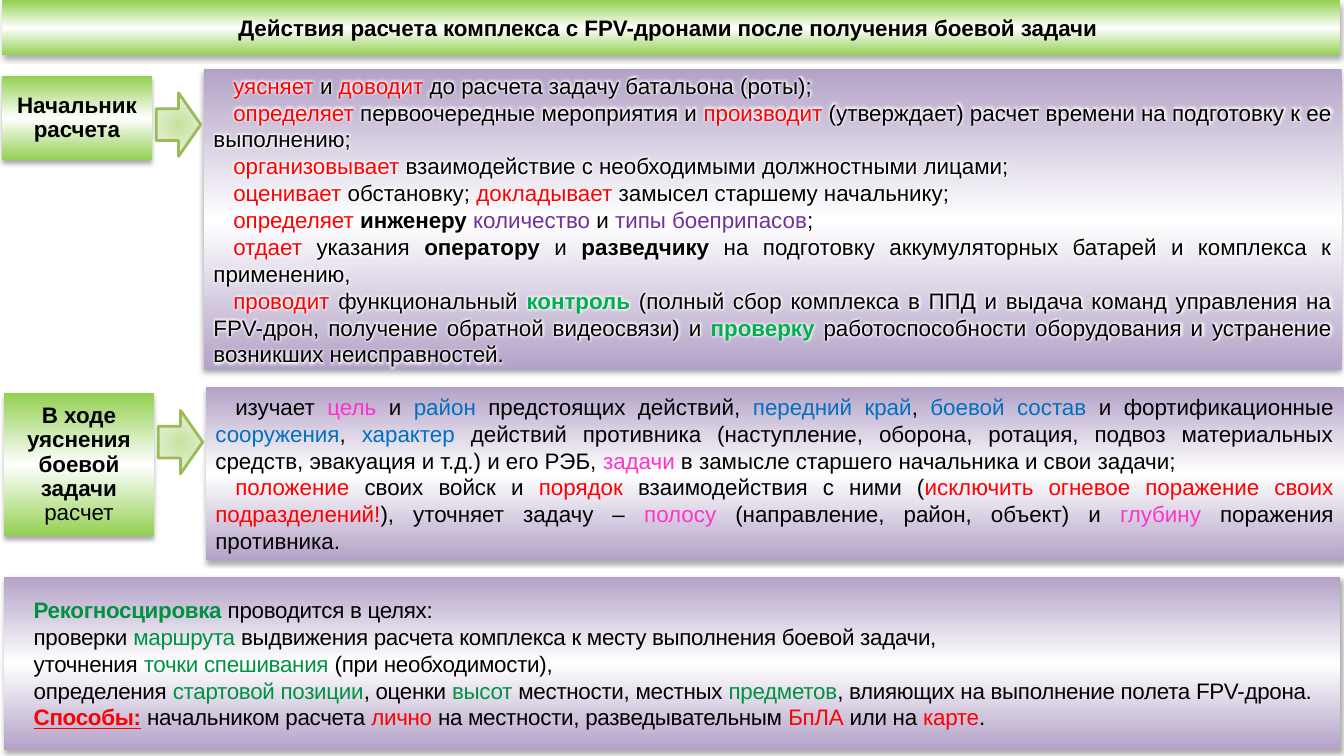
"""Build the slide on the actions of a crew after receiving its task."""
from pptx import Presentation
from pptx.dml.color import RGBColor
from pptx.enum.shapes import MSO_SHAPE as Shape
from pptx.enum.text import MSO_ANCHOR as Anchor, PP_ALIGN as Align
from pptx.oxml import parse_xml
from pptx.oxml.ns import nsdecls, qn
from pptx.util import Cm, Pt

BLACK = RGBColor(0x00, 0x00, 0x00)
WHITE = RGBColor(0xFF, 0xFF, 0xFF)
RED = RGBColor(0xFF, 0x00, 0x00)
PURPLE = RGBColor(0x70, 0x30, 0xA0)
GREEN = RGBColor(0x00, 0xB0, 0x50)
DARK_GREEN = RGBColor(0x00, 0x92, 0x42)
BLUE = RGBColor(0x00, 0x70, 0xC0)
PINK = RGBColor(0xFF, 0x33, 0xCC)
LIME = RGBColor(0x92, 0xD0, 0x50)
LILAC = RGBColor(0xB3, 0xA2, 0xC7)
OLIVE = RGBColor(0x9B, 0xBB, 0x59)
ARROW_STOPS = (RGBColor(0xC7, 0xE2, 0x9E), RGBColor(0xDB, 0xEB, 0xC4), RGBColor(0xED, 0xF5, 0xE2))

VERTICAL = '<a:lin ang="5400000" scaled="0"/>'
RADIAL = '<a:path path="circle"><a:fillToRect l="50000" t="50000" r="50000" b="50000"/></a:path>'

TITLE = [[("Действия расчета комплекса с FPV-дронами после получения боевой задачи ", BLACK, True)]]
CHIEF_LABEL = [[("Начальник расчета", BLACK, True)]]
CHIEF_DUTIES = [
    [("уясняет ", RED), "и ", ("доводит", RED), " до расчета задачу батальона (роты); "],
    [("определяет", RED), " первоочередные мероприятия и ", ("производит", RED),
     " (утверждает) расчет времени на подготовку к ее выполнению; "],
    [("организовывает", RED), " взаимодействие с необходимыми должностными лицами; "],
    [("оценивает", RED), " обстановку; ", ("докладывает", RED), " замысел старшему начальнику; "],
    [("определяет ", RED), ("инженеру ", BLACK, True), ("количество ", PURPLE), "и ",
     ("типы боеприпасов", PURPLE), "; "],
    [("отдает", RED), " указания ", ("оператору", BLACK, True), " и ", ("разведчику", BLACK, True),
     " на подготовку аккумуляторных батарей и комплекса к применению, "],
    [("проводит", RED), " функциональный ", ("контроль", GREEN, True),
     " (полный сбор комплекса в ППД и выдача команд управления на FPV-дрон, "
     "получение обратной видеосвязи) и ", ("проверку", GREEN, True),
     " работоспособности оборудования и устранение возникших неисправностей. "],
]
STUDY_LABEL = [[("В ходе уяснения боевой задачи ", BLACK, True), "расчет"]]
STUDY_POINTS = [
    ["изучает ", ("цель", PINK), " и ", ("район ", BLUE), "предстоящих действий,",
     (" передний край", BLUE), ", ", ("боевой состав ", BLUE), "и фортификационные ",
     ("сооружения", BLUE), ", ", ("характер", BLUE),
     " действий противника (наступление, оборона, ротация, подвоз материальных средств, "
     "эвакуация и т.д.) и его РЭБ, ", ("задачи", PINK),
     " в замысле старшего начальника и свои задачи; "],
    [("положение", RED), " своих войск и ", ("порядок", RED), " взаимодействия с ними (",
     ("исключить огневое поражение своих подразделений!", RED), "), уточняет задачу – ",
     ("полосу", PINK), " (направление, район, объект) и ", ("глубину", PINK),
     " поражения противника."],
]
RECONNAISSANCE = [
    [("Рекогносцировка ", DARK_GREEN, True), "проводится в целях: "],
    ["проверки ", ("маршрута", DARK_GREEN),
     " выдвижения расчета комплекса к месту выполнения боевой задачи, "],
    ["уточнения ", ("точки спешивания ", DARK_GREEN), "(при необходимости), "],
    ["определения ", ("стартовой позиции", DARK_GREEN), ", оценки ", ("высот", DARK_GREEN),
     " местности, местных ", ("предметов", DARK_GREEN),
     ", влияющих на выполнение полета FPV-дрона. "],
    [("Способы:", RED, True, True), " начальником расчета ", ("лично", RED),
     " на местности, разведывательным ", ("БпЛА", RED), " или на ", ("карте", RED), "."],
]


def set_gradient(shape, colors, direction):
    """Fill a shape with three evenly spaced gradient stops."""
    shape.fill.gradient()
    stops = "".join(f'<a:gs pos="{index * 50000}"><a:srgbClr val="{color}"/></a:gs>'
                    for index, color in enumerate(colors))
    gradient = parse_xml(f'<a:gradFill {nsdecls("a")} rotWithShape="1">'
                         f'<a:gsLst>{stops}</a:gsLst>{direction}</a:gradFill>')
    properties = shape._element.spPr
    properties.replace(properties.find(qn("a:gradFill")), gradient)


def add_shadow(shape):
    """Put a soft shadow below a shape."""
    shadow = parse_xml(f'<a:outerShdw {nsdecls("a")} blurRad="{Pt(3.5)}" dist="{Pt(2.2)}" '
                       'dir="5400000" rotWithShape="0"><a:srgbClr val="000000">'
                       '<a:alpha val="32000"/></a:srgbClr></a:outerShdw>')
    shape._element.spPr.find(qn("a:effectLst")).append(shadow)


def add_glow(run):
    """Surround the letters of a run with a white glow."""
    glow = parse_xml(f'<a:effectLst {nsdecls("a")}><a:glow rad="{Pt(5)}">'
                     f'<a:srgbClr val="{WHITE}"/></a:glow></a:effectLst>')
    run.font._element.find(qn("a:solidFill")).addnext(glow)


def add_run(paragraph, text, color=BLACK, bold=False, underline=False):
    """Append one formatted run to a paragraph."""
    run = paragraph.add_run()
    run.text = text
    run.font.name = "Arial"
    run.font.size = Pt(16)
    run.font.bold = bold
    run.font.underline = underline
    run.font.color.rgb = color
    return run


def add_shape(slide, kind, left, top, width, height):
    """Add a preset shape without shadow, placed in centimetres."""
    shape = slide.shapes.add_shape(kind, Cm(left), Cm(top), Cm(width), Cm(height))
    shape.shadow.inherit = False
    return shape


def add_box(slide, place, color, paragraphs, align=Align.CENTER, spacing=1.0):
    """Add a shaded rectangle with text and return its paragraphs."""
    box = add_shape(slide, Shape.RECTANGLE, *place)
    set_gradient(box, (color, WHITE, color), VERTICAL)
    box.line.fill.background()
    add_shadow(box)
    frame = box.text_frame
    frame.word_wrap = True
    frame.vertical_anchor = Anchor.MIDDLE
    for index, pieces in enumerate(paragraphs):
        paragraph = frame.add_paragraph() if index else frame.paragraphs[0]
        paragraph.alignment = align
        paragraph.line_spacing = spacing
        for piece in pieces:
            add_run(paragraph, *((piece,) if isinstance(piece, str) else piece))
    return frame.paragraphs


def add_panel(slide, place, paragraphs):
    """Add a lilac box of justified paragraphs with first-line indents."""
    added = add_box(slide, place, LILAC, paragraphs, Align.JUSTIFY)
    for paragraph in added:
        properties = paragraph._p.get_or_add_pPr()
        properties.set("marL", "0")
        properties.set("indent", str(Cm(0.5)))
    return [run for paragraph in added for run in paragraph.runs]


def add_arrow(slide, left, top):
    """Add a pale green arrow pointing right."""
    arrow = add_shape(slide, Shape.RIGHT_ARROW, left, top, 1.12, 1.6)
    set_gradient(arrow, ARROW_STOPS, RADIAL)
    arrow.line.color.rgb = OLIVE
    arrow.line.width = Pt(2)


def add_stage(slide, left, top, height, label_height, label, paragraphs):
    """Add a label with an arrow to its panel and return the panel's runs."""
    runs = add_panel(slide, (left + 5.08, top, 28.68, height), paragraphs)
    add_box(slide, (left, top + 0.16, 3.78, label_height), LIME, label, spacing=0.9)
    add_arrow(slide, left + 3.89, top + 0.59)
    return runs


def main():
    """Build and save the slide."""
    presentation = Presentation()
    presentation.slide_width = Cm(33.87)
    presentation.slide_height = Cm(19.05)
    slide = presentation.slides.add_slide(presentation.slide_layouts[6])
    add_box(slide, (0.05, 0, 33.73, 1.4), LIME, TITLE)
    for run in add_stage(slide, 0.05, 1.75, 7.57, 2.13, CHIEF_LABEL, CHIEF_DUTIES):
        add_glow(run)
    add_stage(slide, 0.1, 9.75, 4.37, 3.61, STUDY_LABEL, STUDY_POINTS)
    for run in add_panel(slide, (0.1, 14.53, 33.68, 4.37), RECONNAISSANCE):
        run.font._element.set("spc", "-20")
    presentation.save("out.pptx")


if __name__ == "__main__":
    main()
